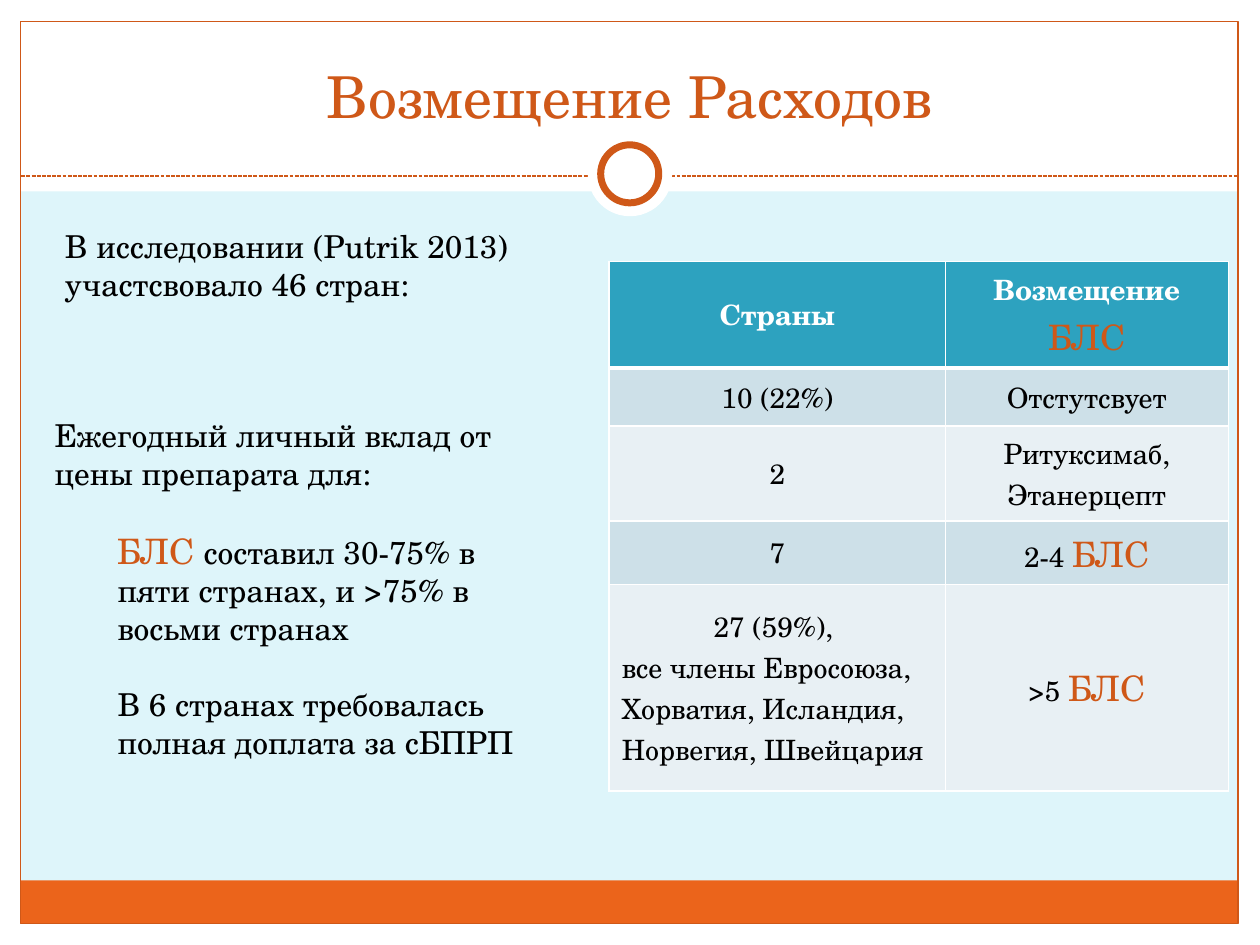
from lxml.etree import SubElement
from pptx import Presentation
from pptx.dml.color import RGBColor
from pptx.enum.dml import MSO_LINE
from pptx.enum.shapes import MSO_CONNECTOR, MSO_SHAPE
from pptx.enum.text import MSO_ANCHOR, PP_ALIGN
from pptx.oxml import parse_xml
from pptx.oxml.ns import nsdecls, qn
from pptx.util import Cm, Pt

FONT = "TeX Gyre Schola"
ORANGE, WHITE, BLACK = "CF5818", "FFFFFF", "000000"
TEAL, DARK, LIGHT = "2DA2BF", "CDE0E8", "E8F0F4"
DRUG = ("БЛС", 20, ORANGE)


def color(code):
    """Turn a hex string into a colour."""
    return RGBColor.from_string(code)


def add_run(para, text, size, code, bold=False):
    """Append one styled run to a paragraph."""
    run = para.add_run()
    run.text = text
    font = run.font
    font.name, font.size, font.bold = FONT, Pt(size), bold
    font.color.rgb = color(code)


def add_form(slide, kind, box, fill=None, line=None, width=0.75):
    """Draw a preset shape with an optional fill and outline."""
    form = slide.shapes.add_shape(kind, *map(Cm, box))
    form.shadow.inherit = False
    if fill:
        form.fill.solid()
        form.fill.fore_color.rgb = color(fill)
    else:
        form.fill.background()
    if line:
        form.line.color.rgb = color(line)
        form.line.width = Pt(width)
    else:
        form.line.fill.background()


def add_rule(slide, left, right, top):
    """Draw the dashed rule below the title."""
    rule = slide.shapes.add_connector(
        MSO_CONNECTOR.STRAIGHT, Cm(left), Cm(top), Cm(right), Cm(top))
    rule.line.color.rgb = color(ORANGE)
    rule.line.width = Pt(0.75)
    rule.line.dash_style = MSO_LINE.SQUARE_DOT
    SubElement(rule._element.spPr, qn("a:effectLst"))


def add_text(slide, box, paras, anchor=MSO_ANCHOR.TOP, align=PP_ALIGN.LEFT):
    """Add a text box of paragraphs given as (indent, gap, runs)."""
    frame = slide.shapes.add_textbox(*map(Cm, box)).text_frame
    frame.word_wrap = True
    frame.vertical_anchor = anchor
    for index, (indent, gap, runs) in enumerate(paras):
        para = frame.paragraphs[0] if index == 0 else frame.add_paragraph()
        para.alignment = align
        para.space_before = Pt(gap)
        para._p.get_or_add_pPr().set("marL", str(Cm(indent)))
        for run in runs:
            add_run(para, *run)


def set_edges(cell, base):
    """Give a cell white borders with its own bottom width."""
    props = cell._tc.get_or_add_tcPr()
    for spot, (side, width) in enumerate(zip("LRTB", (1, 1, 1, base))):
        props.insert(spot, parse_xml(
            f'<a:ln{side} {nsdecls("a")} w="{Pt(width)}"><a:solidFill>'
            f'<a:srgbClr val="{WHITE}"/></a:solidFill></a:ln{side}>'))


def fill_cell(cell, paras, fill, base):
    """Fill a cell with paragraphs given as (align, runs)."""
    cell.fill.solid()
    cell.fill.fore_color.rgb = color(fill)
    cell.vertical_anchor = MSO_ANCHOR.MIDDLE
    set_edges(cell, base)
    frame = cell.text_frame
    for index, (align, runs) in enumerate(paras):
        para = frame.paragraphs[0] if index == 0 else frame.add_paragraph()
        para.alignment = align
        for run in runs:
            add_run(para, *run)


def mid(*runs):
    """Make one centred paragraph."""
    return [(PP_ALIGN.CENTER, runs)]


def plain(text):
    """Make a black run of table text."""
    return text, 16, BLACK


def add_grid(slide):
    """Build the table of countries and refunds."""
    rows = [
        (mid(("Страны", 16, WHITE, True)),
         mid(("Возмещение ", 16, WHITE, True), DRUG)),
        (mid(plain("10 (22%)")), mid(plain("Отстутсвует"))),
        (mid(plain("2")), mid(plain("Ритуксимаб, Этанерцепт"))),
        (mid(plain("7")), mid(plain("2-4 "), DRUG)),
        (mid(plain("27 (59%), ")) + [(PP_ALIGN.LEFT, [plain(
            "все члены Евросоюза, Хорватия, Исландия, Норвегия, Швейцария")])],
         mid(plain(">5 "), DRUG)),
    ]
    widths, heights = (6.78, 5.7), (2.15, 1.17, 1.91, 1.28, 4.17)
    table = slide.shapes.add_table(
        len(rows), len(widths), Cm(12.28), Cm(5.27),
        Cm(sum(widths)), Cm(sum(heights))).table
    for col, width in zip(table.columns, widths):
        col.width = Cm(width)
    for index, (row, height) in enumerate(zip(rows, heights)):
        table.rows[index].height = Cm(height)
        fill = (LIGHT, DARK)[index % 2] if index else TEAL
        for side, paras in enumerate(row):
            fill_cell(table.cell(index, side), paras, fill, 1 if index else 3)


def add_decor(slide):
    """Draw the white margins, footer band, frame, rule and ring."""
    rect, oval = MSO_SHAPE.RECTANGLE, MSO_SHAPE.OVAL
    for box in ((0, 18.62, 25.4, 0.43), (0, 0, 25.4, 3.86),
                (0, 0, 0.43, 19.05), (24.97, 0, 0.43, 19.05)):
        add_form(slide, rect, box, WHITE)
    add_form(slide, rect, (0.41, 17.75, 24.54, 0.87), "EB641B")
    add_form(slide, rect, (0.42, 0.43, 24.54, 18.19), line=ORANGE)
    add_rule(slide, 0.43, 24.97, 3.55)
    add_form(slide, oval, (11.85, 2.66, 1.7, 1.7), WHITE)
    add_form(slide, oval, (12.11, 2.92, 1.17, 1.17), WHITE, ORANGE, 4)


def main():
    """Build and save the slide."""
    deck = Presentation()
    deck.slide_width, deck.slide_height = Cm(25.4), Cm(19.05)
    slide = deck.slides.add_slide(deck.slide_layouts[6])
    slide.background.fill.solid()
    slide.background.fill.fore_color.rgb = color("DEF5FA")
    add_decor(slide)
    add_text(slide, (0.85, 0.62, 23.7, 2.12),
             [(0, 0, [("Возмещение Расходов", 33, ORANGE)])],
             MSO_ANCHOR.BOTTOM, PP_ALIGN.CENTER)
    add_text(slide, (1.06, 4.45, 9.95, 2.12), [(0, 0, [
        ("В исследовании (Putrik 2013) участсвовало 46 стран:", 18, BLACK)])])
    add_grid(slide)
    add_text(slide, (0.85, 8.26, 10.58, 7.26), [
        (0, 0, [("Ежегодный личный вклад от цены препарата для:", 18, BLACK)]),
        (1.27, 21.6, [DRUG, (
            " составил 30-75% в пяти странах, и >75% в восьми странах",
            18, BLACK)]),
        (1.27, 21.6, [(
            "В 6 странах требовалась полная доплата за сБПРП", 18, BLACK)]),
    ])
    deck.save("out.pptx")


if __name__ == "__main__":
    main()
